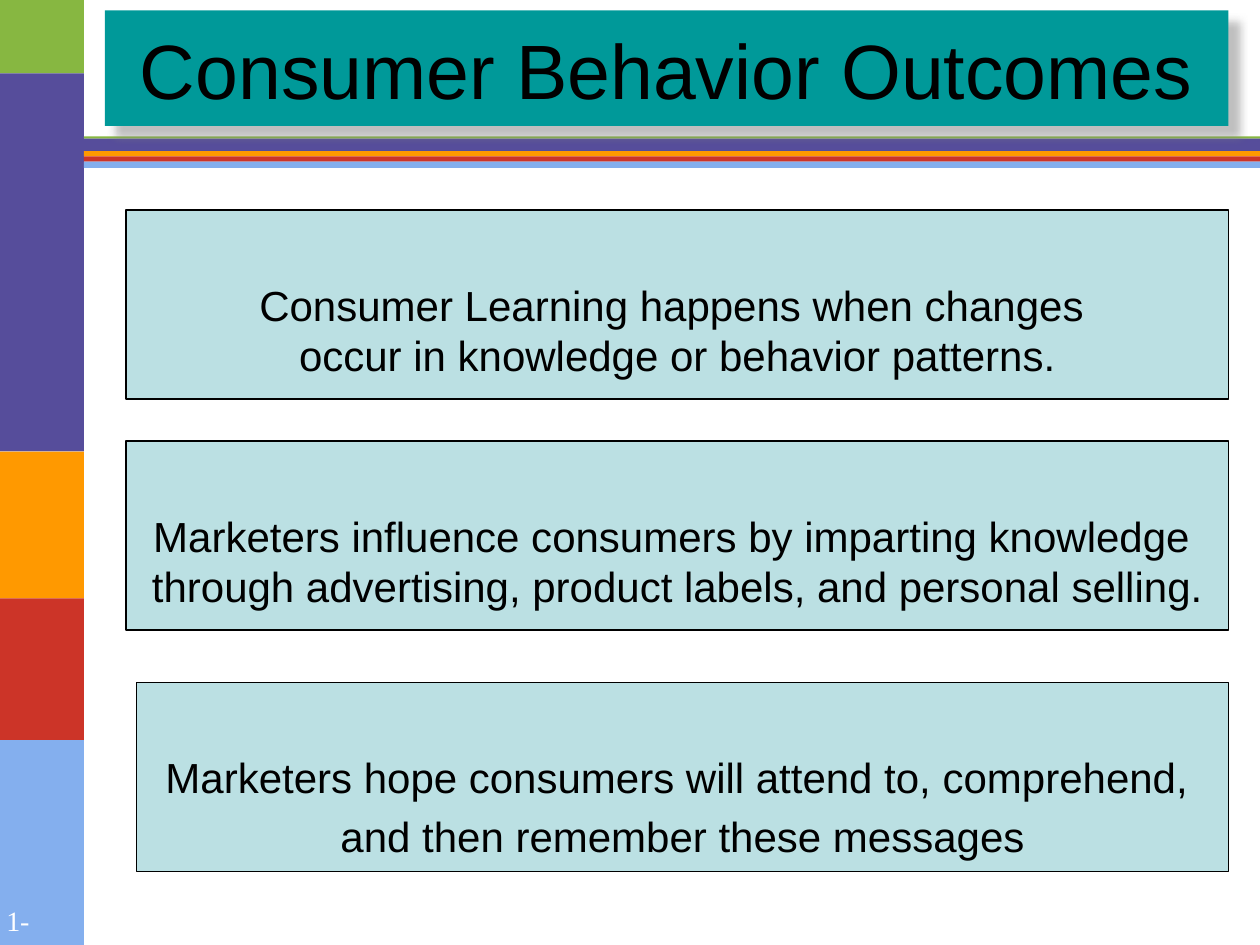
from itertools import pairwise

from lxml.etree import SubElement
from pptx import Presentation
from pptx.dml.color import RGBColor
from pptx.enum.shapes import MSO_SHAPE as Preset
from pptx.enum.text import MSO_ANCHOR as Anchor, PP_ALIGN as Align
from pptx.oxml.ns import qn
from pptx.util import Inches, Pt

COLORS = {
    "green": "87B741", "purple": "564D9B", "orange": "FF9900",
    "red": "CC3428", "blue": "84AFEE", "teal": "009999",
    "pale": "BBE0E3", "black": "000000", "white": "FFFFFF",
    "gray": "808080",
}
STRIPES = ["green", "purple", "orange", "red", "blue"]
COLUMNS, ROWS = 120, 90
SIDEBAR = 8
RIGHT = 117


class SlideBuilder:
    """Draws on one slide; positions are columns and rows of the grid."""

    font = "Arial"

    def __init__(self, deck):
        self.slide = deck.slides.add_slide(deck.slide_layouts[6])
        self.column = deck.slide_width / COLUMNS
        self.row = deck.slide_height / ROWS

    def place(self, left, top, width, height):
        return (round(left * self.column), round(top * self.row),
                round(width * self.column), round(height * self.row))

    def block(self, area, fill, line=None):
        rect = self.slide.shapes.add_shape(Preset.RECTANGLE, *self.place(*area))
        rect.shadow.inherit = False
        rect.fill.solid()
        rect.fill.fore_color.rgb = RGBColor.from_string(COLORS[fill])
        if line:
            rect.line.color.rgb = RGBColor.from_string(COLORS[line])
            rect.line.width = Pt(0.75)
        else:
            rect.line.fill.background()
        return rect

    def set_text(self, shape, lines, size, color="black", font=None,
                 align=Align.CENTER, anchor=Anchor.MIDDLE, inset=0, bottom=0, gap=0):
        frame = shape.text_frame
        frame.word_wrap = False
        frame.vertical_anchor = anchor
        frame.margin_left = frame.margin_right = frame.margin_top = Inches(inset)
        frame.margin_bottom = Inches(bottom)
        frame.text = "\n".join(lines)
        for number, paragraph in enumerate(frame.paragraphs):
            paragraph.alignment = align
            if number:
                paragraph.space_before = Pt(gap)
            for run in paragraph.runs:
                run.font.name = font or self.font
                run.font.size = Pt(size)
                run.font.color.rgb = RGBColor.from_string(COLORS[color])

    def drop_shadow(self, shape):
        effects = shape._element.spPr.find(qn("a:effectLst"))
        shadow = SubElement(effects, qn("a:outerShdw"), blurRad=str(int(Pt(5))),
                            dist=str(int(Pt(8.5))), dir=str(45 * 60000),
                            algn="ctr", rotWithShape="0")
        tint = SubElement(shadow, qn("a:srgbClr"), val=COLORS["gray"])
        SubElement(tint, qn("a:alpha"), val="50000")

    def sidebar(self, edges):
        for color, (top, end) in zip(STRIPES, pairwise(edges)):
            self.block((0, top, SIDEBAR, end - top), color)

    def header_rule(self, edges):
        for color, (top, end) in zip(STRIPES, pairwise(edges)):
            self.block((SIDEBAR, top, COLUMNS - SIDEBAR, end - top), color)

    def page_label(self, text):
        label = self.slide.shapes.add_textbox(*self.place(0, 85.5, SIDEBAR, 4.1))
        self.set_text(label, [text], 16, "white", "Times New Roman",
                      Align.LEFT, Anchor.TOP, inset=0.05, bottom=0.05)

    def title(self, text):
        banner = self.block((10, 1, RIGHT - 10, 11), "teal")
        self.drop_shadow(banner)
        self.set_text(banner, [text], 44)

    def card(self, left, top, lines, bottom, gap=0):
        panel = self.block((left, top, RIGHT - left, 18), "pale", "black")
        self.set_text(panel, lines, 24, anchor=Anchor.BOTTOM, bottom=bottom, gap=gap)


def main():
    deck = Presentation()
    deck.slide_width, deck.slide_height = Inches(10), Inches(7.5)
    page = SlideBuilder(deck)
    page.sidebar([0, 7, 43, 57, 70.5, ROWS])
    page.page_label("1-")
    page.header_rule([13, 13.2, 14.4, 14.9, 15.4, 16])
    page.title("Consumer Behavior Outcomes")
    page.card(12, 20, ["Consumer Learning happens when changes ",
                       "occur in knowledge or behavior patterns."], bottom=0.15)
    page.card(12, 42, ["Marketers influence consumers by imparting knowledge ",
                       "through advertising, product labels, and personal selling."],
              bottom=0.15)
    page.card(13, 65, ["Marketers hope consumers will attend to, comprehend, ",
                       "and then remember these messages"], bottom=0.08, gap=5)
    deck.save("out.pptx")


if __name__ == "__main__":
    main()
